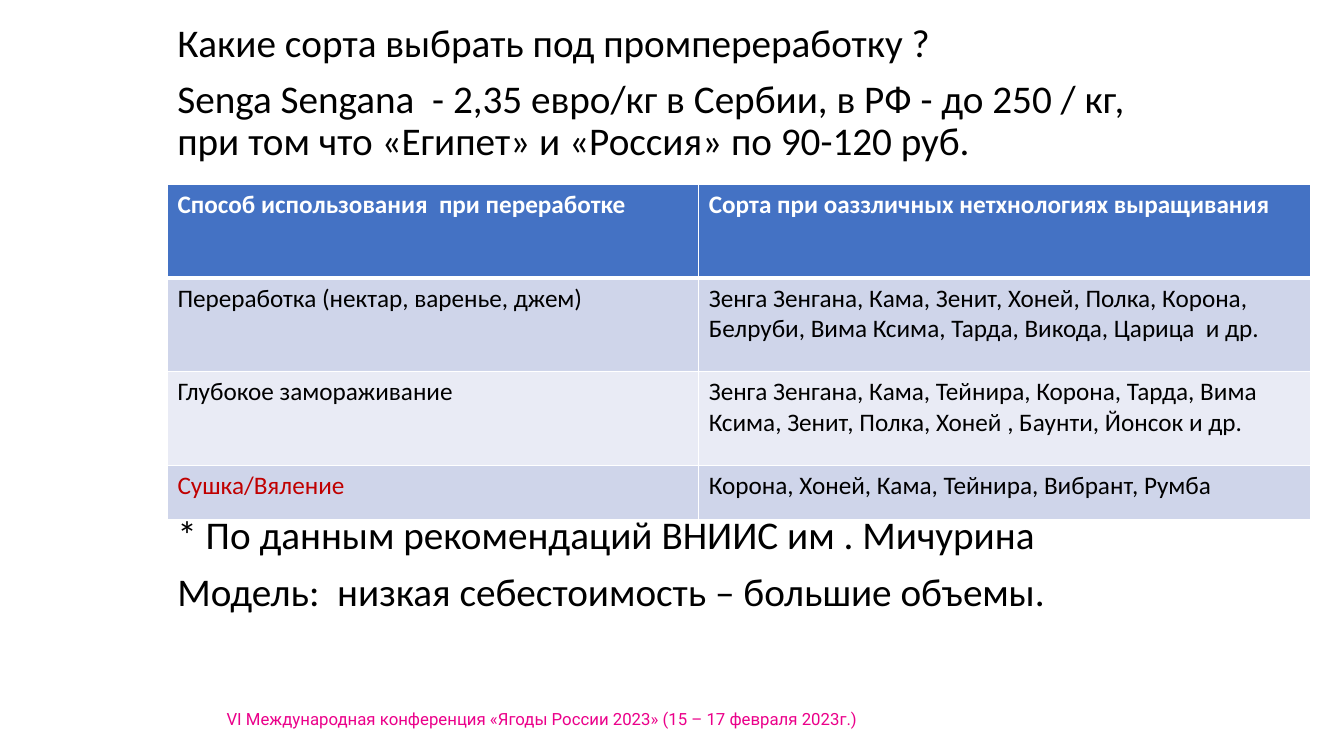
from lxml import etree
from pptx import Presentation
from pptx.dml.color import RGBColor
from pptx.oxml.ns import qn
from pptx.util import Cm, Pt

BLACK, WHITE, RED, PINK = "000000", "FFFFFF", "C00000", "EB008A"
HEADER_BLUE, BAND_DARK, BAND_LIGHT = "4472C4", "CFD5EA", "E9EBF5"

LEFT = 4.22
COLUMN_WIDTHS = (13.39, 15.42)
ROW_HEIGHTS = (2.36, 2.36, 2.36, 1.37)

INTRO = (
    "Какие сорта выбрать под промпереработку ?",
    "Senga Sengana  - 2,35 евро/кг в Сербии, в РФ - до 250 / кг, "
    "при том что «Египет» и «Россия» по 90-120 руб.",
)
VARIETIES = (
    ("Способ использования  при переработке",
     "Сорта при оаззличных нетхнологиях выращивания"),
    ("Переработка (нектар, варенье, джем)",
     "Зенга Зенгана, Кама, Зенит, Хоней, Полка, Корона, Белруби, "
     "Вима Ксима, Тарда, Викода, Царица  и др."),
    ("Глубокое замораживание",
     "Зенга Зенгана, Кама, Тейнира, Корона, Тарда, Вима Ксима, "
     "Зенит, Полка, Хоней , Баунти, Йонсок и др."),
    ("Сушка/Вяление", "Корона, Хоней, Кама, Тейнира, Вибрант, Румба"),
)
CONCLUSION = (
    "* По данным рекомендаций ВНИИС им . Мичурина",
    "Модель:  низкая себестоимость – большие объемы.",
)
CONFERENCE = ("VI Международная конференция «Ягоды России 2023» (15 – 17 февраля 2023г.)",)


def rgb(value):
    return RGBColor.from_string(value)


def set_font(paragraph, size, color, name="Calibri", bold=False):
    font = paragraph.font
    font.name, font.size, font.bold = name, Pt(size), bold
    font.color.rgb = rgb(color)


def add_text(slide, lines, left, top, width, height, size=28, color=BLACK,
             name="Calibri", line_spacing=0.9):
    frame = slide.shapes.add_textbox(Cm(left), Cm(top), Cm(width), Cm(height)).text_frame
    frame.word_wrap = True
    for index, line in enumerate(lines):
        paragraph = frame.add_paragraph() if index else frame.paragraphs[0]
        paragraph.text = line
        paragraph.line_spacing = line_spacing
        paragraph.space_before = Pt(10 if index else 0)
        set_font(paragraph, size, color, name)


def set_borders(cell, top, bottom):
    """White borders; they must precede the fill in the cell properties."""
    properties = cell._tc.get_or_add_tcPr()
    widths = (("a:lnL", 1), ("a:lnR", 1), ("a:lnT", top), ("a:lnB", bottom))
    for position, (tag, width) in enumerate(widths):
        line = etree.Element(qn(tag), w=str(Pt(width)))
        fill = etree.SubElement(line, qn("a:solidFill"))
        etree.SubElement(fill, qn("a:srgbClr"), val=WHITE)
        properties.insert(position, line)


def add_varieties_table(slide):
    table = slide.shapes.add_table(
        len(VARIETIES), len(COLUMN_WIDTHS), Cm(LEFT), Cm(4.65),
        Cm(sum(COLUMN_WIDTHS)), Cm(sum(ROW_HEIGHTS))).table
    for column, width in zip(table.columns, COLUMN_WIDTHS):
        column.width = Cm(width)
    for r, texts in enumerate(VARIETIES):
        table.rows[r].height = Cm(ROW_HEIGHTS[r])
        header = r == 0
        band = HEADER_BLUE if header else BAND_DARK if r % 2 else BAND_LIGHT
        for c, text in enumerate(texts):
            cell = table.cell(r, c)
            cell.text = text
            cell.fill.solid()
            cell.fill.fore_color.rgb = rgb(band)
            drying = (r, c) == (3, 0)
            color = WHITE if header else RED if drying else BLACK
            set_font(cell.text_frame.paragraphs[0], 18, color, bold=header)
            set_borders(cell, top=3 if r == 1 else 1, bottom=3 if header else 1)


def main():
    presentation = Presentation()
    presentation.slide_width, presentation.slide_height = Cm(33.87), Cm(19.05)
    slide = presentation.slides.add_slide(presentation.slide_layouts[6])

    # Conference footer
    add_text(slide, CONFERENCE, 5.46, 17.73, 16.94, 0.76, 12, PINK, "Roboto", 1.0)
    # Question and prices above the table, source and model below it
    add_text(slide, INTRO, LEFT, 0.46, 25.65, 3.9)
    add_text(slide, CONCLUSION, LEFT, 12.88, 25.65, 3.7)
    # Varieties by processing method
    add_varieties_table(slide)

    presentation.save("out.pptx")


if __name__ == "__main__":
    main()
